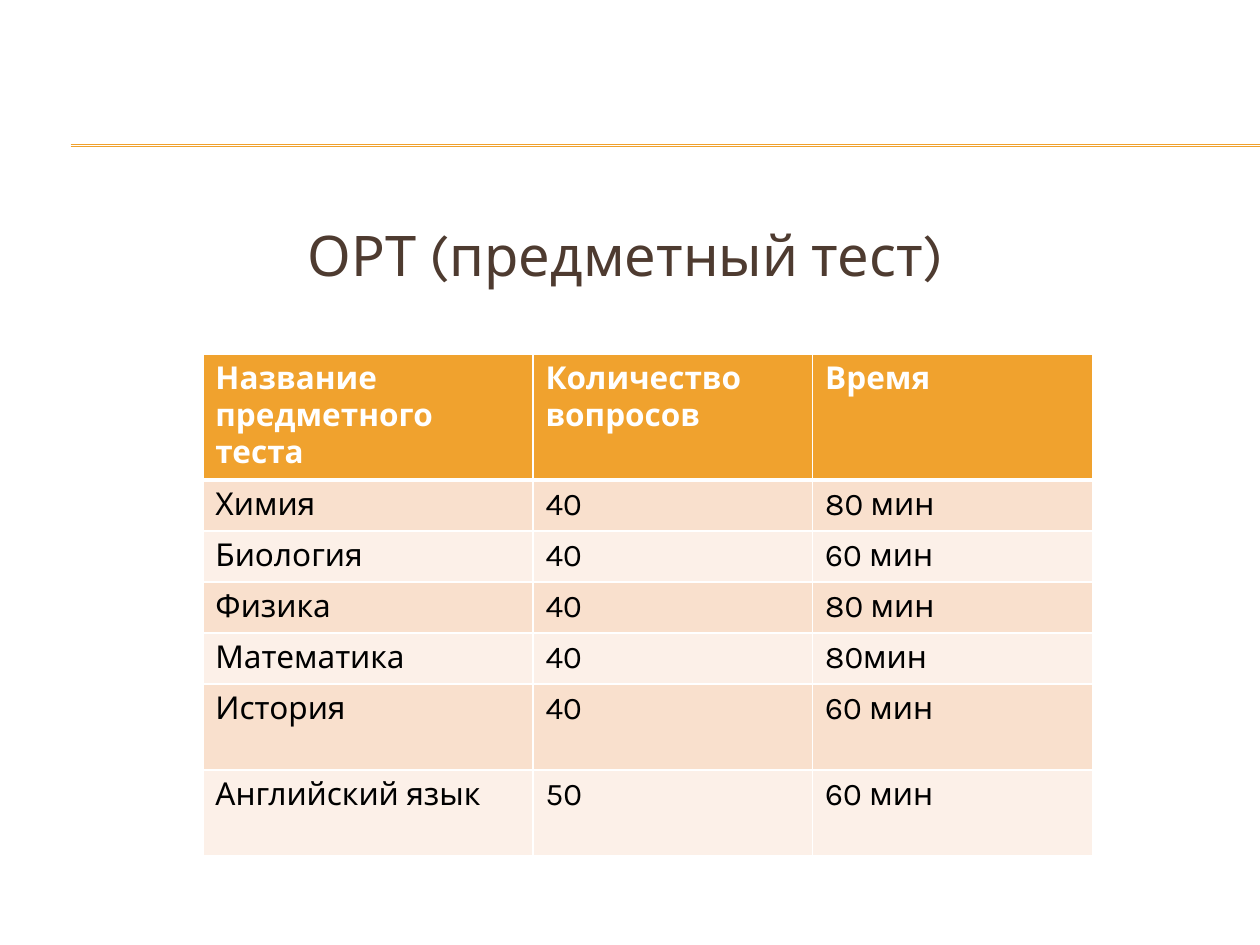
from lxml import etree
from pptx import Presentation, util as u
from pptx.dml.color import RGBColor
from pptx.enum import shapes
from pptx.oxml import ns

ACCENT, BROWN, WHITE, BLACK = "F0A22E", "4E3B30", "FFFFFF", "000000"
BANDS = ["F9E0CD", "FCF0E8"]

deck = Presentation()
deck.slide_width, deck.slide_height = u.Inches(10), u.Inches(7.5)
slide = deck.slides.add_slide(deck.slide_layouts[6])


def grid(across, down):
    """Percentages of the slide's width and height as lengths."""
    return int(deck.slide_width * across / 100), int(deck.slide_height * down / 100)


def add_run(paragraph, words, size, color, bold=False):
    run = paragraph.add_run()
    run.text = words
    run.font.name, run.font.size, run.font.bold = "Karla", u.Pt(size), bold
    run.font.color.rgb = RGBColor.from_string(color)


# Double rule under the header area
for down in (15.33, 15.47):
    rule = slide.shapes.add_connector(
        shapes.MSO_CONNECTOR.STRAIGHT, *grid(5.6, down), *grid(100, down))
    rule.line.color.rgb = RGBColor.from_string(ACCENT)
    rule.line.width = u.Pt(0.75)
    etree.SubElement(rule._element.spPr, ns.qn("a:effectLst"))

# Heading, indented within the body area
heading = slide.shapes.add_textbox(*grid(3.3, 22.67), *grid(95, 66)).text_frame
heading.word_wrap = True
heading.margin_left = grid(21.1, 0)[0]
heading.paragraphs[0].space_before = u.Pt(6.4)
add_run(heading.paragraphs[0], "ОРТ (предметный тест)", 32, BROWN)

# Subject tests
subjects = [
    ("Название предметного теста", "Количество вопросов", "Время"),
    ("Химия", "40", "80 мин"),
    ("Биология", "40", "60 мин"),
    ("Физика", "40", "80 мин"),
    ("Математика", "40", "80мин"),
    ("История", "40", "60 мин"),
    ("Английский язык", "50", "60 мин"),
]
column_shares = [26.2, 22.2, 22.2]
row_shares = [13.1] + [5.4] * 4 + [9.1] * 2
schedule = slide.shapes.add_table(
    len(subjects), len(column_shares), *grid(16.1, 37.47),
    *grid(sum(column_shares), sum(row_shares))).table
for column, share in zip(schedule.columns, column_shares):
    column.width = grid(share, 0)[0]
for row, share in zip(schedule.rows, row_shares):
    row.height = grid(0, share)[1]

for r, entries in enumerate(subjects):
    header = r == 0
    for c, words in enumerate(entries):
        cell = schedule.cell(r, c)
        add_run(cell.text_frame.paragraphs[0], words, 18,
                WHITE if header else BLACK, header)
        # White borders, thicker between header and body
        properties = cell._tc.get_or_add_tcPr()
        for side in "LRTB":
            thick = (r, side) in ((0, "B"), (1, "T"))
            border = etree.SubElement(properties, ns.qn(f"a:ln{side}"),
                                      w=str(u.Pt(3 if thick else 1)))
            paint = etree.SubElement(border, ns.qn("a:solidFill"))
            etree.SubElement(paint, ns.qn("a:srgbClr"), val=WHITE)
        cell.fill.solid()
        cell.fill.fore_color.rgb = RGBColor.from_string(
            ACCENT if header else BANDS[(r - 1) % 2])

deck.save("out.pptx")
